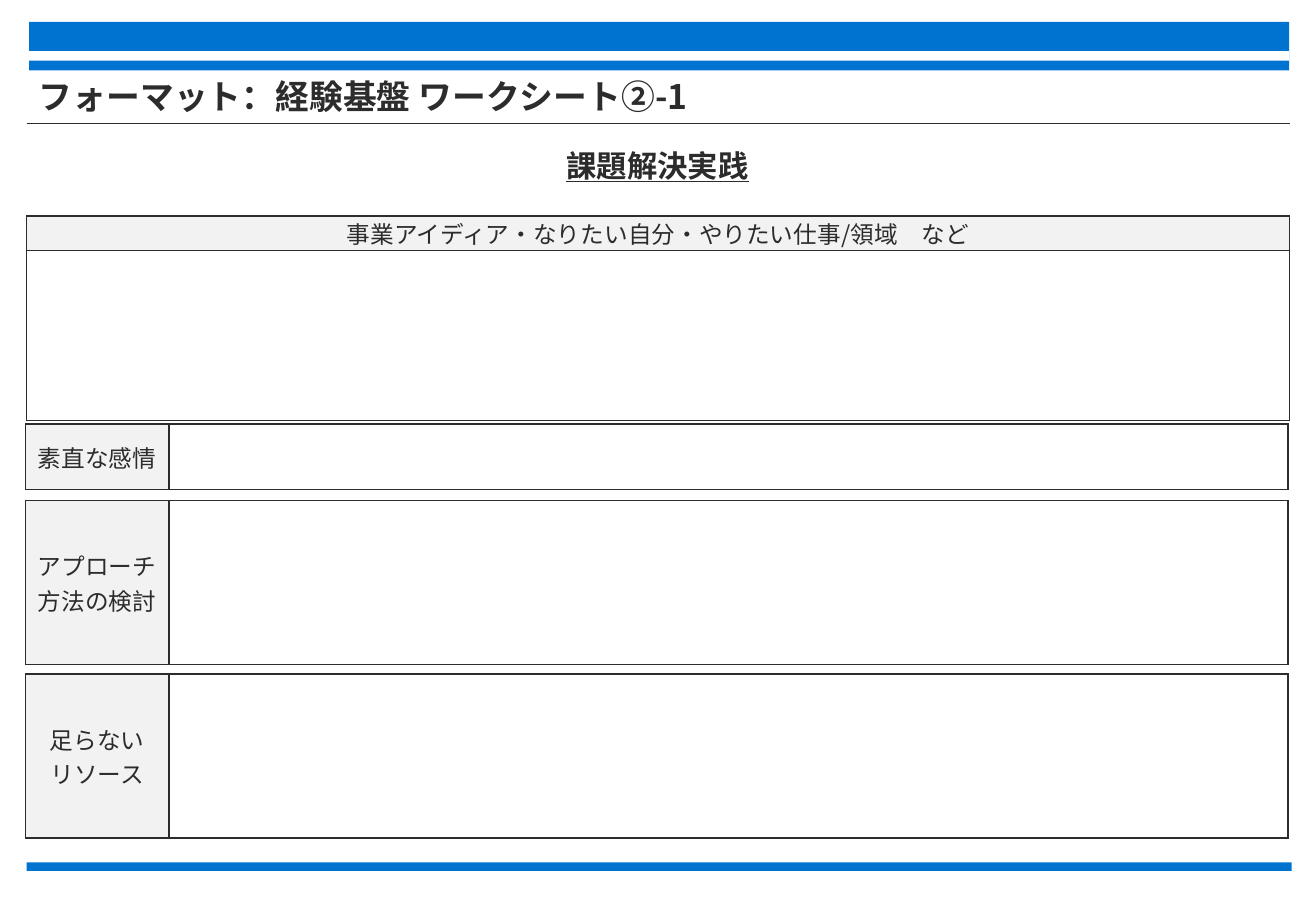
from lxml.etree import SubElement
from pptx import Presentation
from pptx.dml.color import RGBColor
from pptx.enum.shapes import MSO_CONNECTOR, MSO_SHAPE
from pptx.enum.text import MSO_ANCHOR, MSO_AUTO_SIZE, PP_ALIGN
from pptx.oxml.ns import qn
from pptx.util import Inches, Pt

C = {"blue": "0072CF", "white": "FFFFFF", "ink": "2C2C2C", "label": "F2F2F2"}
NOTO = "Noto Sans CJK JP"


def write(p, text, size, align=PP_ALIGN.CENTER, font=NOTO, bold=False):
    p.text = text
    p.alignment = align
    f = p.font
    f.name, f.size, f.bold = font, Pt(size), bold
    f.color.rgb = RGBColor.from_string(C["ink"])
    SubElement(p._p.pPr.find(qn("a:defRPr")), qn("a:ea"), typeface=NOTO)


def add_grid(s, x, y, widths, heights, label):
    table = s.shapes.add_table(len(heights), len(widths), Inches(x), Inches(y),
                               Inches(sum(widths)), Inches(sum(heights))).table
    table.first_row = table.horz_banding = False
    for col, w in zip(table.columns, widths):
        col.width = Inches(w)
    for row, h in zip(table.rows, heights):
        row.height = Inches(h)
    for cell in table.iter_cells():
        tcPr = cell._tc.get_or_add_tcPr()
        for side in ("lnL", "lnR", "lnT", "lnB"):
            ln = SubElement(tcPr, qn(f"a:{side}"), w=str(Pt(1)))
            fill = SubElement(ln, qn("a:solidFill"))
            SubElement(fill, qn("a:srgbClr"), val=C["ink"])
        cell.fill.solid()
        cell.fill.fore_color.rgb = RGBColor.from_string(C["white"])
    cell = table.cell(0, 0)
    cell.fill.fore_color.rgb = RGBColor.from_string(C["label"])
    cell.margin_left = cell.margin_right = Inches(0.01)
    cell.margin_top = cell.margin_bottom = 0
    cell.vertical_anchor = MSO_ANCHOR.MIDDLE
    write(cell.text_frame.paragraphs[0], label, 14)


prs = Presentation()
prs.slide_width, prs.slide_height = Inches(10.83), Inches(7.5)
s = prs.slides.add_slide(prs.slide_layouts[5])

for x, y, w, h, color in [(0.22, 7.1, 10.41, 0.07, "blue"),
                          (0.24, 0.18, 10.37, 0.4, "blue"),
                          (0.24, 0.42, 10.37, 0.08, "white")]:
    bar = s.shapes.add_shape(MSO_SHAPE.RECTANGLE, Inches(x), Inches(y), Inches(w), Inches(h))
    bar.shadow.inherit = False
    bar.fill.solid()
    bar.fill.fore_color.rgb = RGBColor.from_string(C[color])
    bar.line.fill.background()

rule = s.shapes.add_connector(MSO_CONNECTOR.STRAIGHT, Inches(0.22), Inches(1.02),
                              Inches(10.62), Inches(1.02))
rule.line.color.rgb = RGBColor.from_string(C["ink"])
rule.line.width = Pt(0.5)
SubElement(rule._element.spPr, qn("a:effectLst"))

title = s.shapes.title
title.left, title.top, title.width, title.height = Inches(0.22), Inches(0.61), Inches(10.4), Inches(0.4)
tf = title.text_frame
tf.auto_size = MSO_AUTO_SIZE.NONE
tf.vertical_anchor = MSO_ANCHOR.MIDDLE
write(tf.paragraphs[0], "フォーマット：経験基盤 ワークシート②-1", 20, PP_ALIGN.LEFT, bold=True)
tf.paragraphs[0].line_spacing = 0.9

add_grid(s, 0.22, 1.78, [10.39], [0.28, 1.4], "事業アイディア・なりたい自分・やりたい仕事/領域　など")
for y, h, label in [(3.49, 0.54, "素直な感情"),
                    (4.12, 1.35, "アプローチ\n方法の検討"),
                    (5.55, 1.35, "足らない\nリソース")]:
    add_grid(s, 0.21, y, [1.18, 9.21], [h], label)

tf = s.shapes.add_textbox(Inches(2.7), Inches(1.16), Inches(5.42), Inches(0.4)).text_frame
tf.word_wrap = True
write(tf.paragraphs[0], "課題解決実践", 18, font="Calibri", bold=True)
tf.paragraphs[0].font.underline = True

prs.save("out.pptx")
